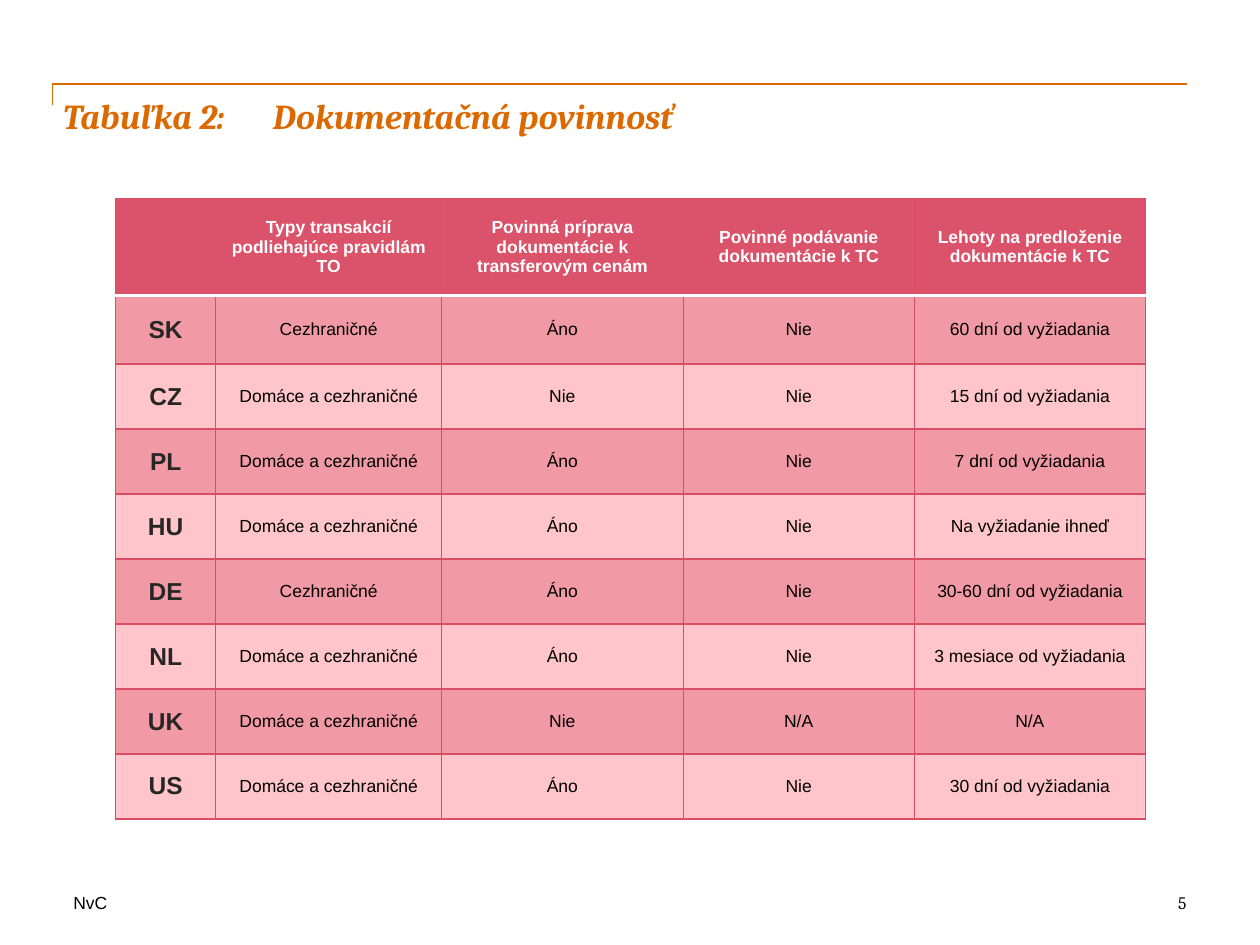
from lxml.etree import SubElement
from pptx import Presentation
from pptx.dml.color import RGBColor
from pptx.enum.text import MSO_ANCHOR as Anchor, MSO_AUTO_SIZE as AutoSize, PP_ALIGN as Align
from pptx.oxml.ns import qn
from pptx.util import Cm, Pt

ORANGE, BLACK, WHITE = "DC6900", "000000", "FFFFFF"
HEADER_FILL, BORDER, CODE_COLOR = "DB536A", "D94E65", "262626"
BAND_FILLS = ("F19AA5", "FFC5CB")

TITLE = "Dokumentačná povinnosť"
LABEL = "Tabuľka 2:"
COMPANY = "NvC"
PAGE = "5"
HEADERS = (
    "",
    "Typy transakcií podliehajúce pravidlám TO",
    "Povinná príprava dokumentácie k transferovým cenám",
    "Povinné podávanie dokumentácie k TC",
    "Lehoty na predloženie dokumentácie k TC",
)
ABROAD, BOTH = "Cezhraničné", "Domáce a cezhraničné"
COUNTRIES = (
    ("SK", ABROAD, "Áno", "Nie", "60 dní od vyžiadania"),
    ("CZ", BOTH, "Nie", "Nie", "15 dní od vyžiadania"),
    ("PL", BOTH, "Áno", "Nie", "7 dní od vyžiadania"),
    ("HU", BOTH, "Áno", "Nie", "Na vyžiadanie ihneď"),
    ("DE", ABROAD, "Áno", "Nie", "30-60 dní od vyžiadania"),
    ("NL", BOTH, "Áno", "Nie", "3 mesiace od vyžiadania"),
    ("UK", BOTH, "Nie", "N/A", "N/A"),
    ("US", BOTH, "Áno", "Nie", "30 dní od vyžiadania"),
)
COLUMN_WIDTHS = (2.02, 4.55, 4.87, 4.66, 4.66)
ROW_HEIGHTS = (1.94, 1.39) + (1.31,) * 7


def color(value):
    return RGBColor.from_string(value)


def write(text_frame, text, size, font, fill, bold=False, italic=False, align=Align.LEFT):
    text_frame.text = text
    paragraph = text_frame.paragraphs[0]
    paragraph.alignment = align
    for run in paragraph.runs:
        run.font.size = Pt(size)
        run.font.name = font
        run.font.bold = bold
        run.font.italic = italic
        run.font.color.rgb = color(fill)


def place_text(shape, box, *args, **style):
    shape.left, shape.top, shape.width, shape.height = map(Cm, box)
    frame = shape.text_frame
    frame.word_wrap = True
    frame.auto_size = AutoSize.NONE
    frame.vertical_anchor = Anchor.TOP
    frame.margin_left = frame.margin_top = frame.margin_right = frame.margin_bottom = 0
    write(frame, *args, **style)


def add_text(slide, box, *args, **style):
    place_text(slide.shapes.add_textbox(0, 0, 0, 0), box, *args, **style)


def set_border(cell, side, value, width):
    line = SubElement(cell._tc.get_or_add_tcPr(), qn(f"a:ln{side}"), w=str(Pt(width)))
    fill = SubElement(line, qn("a:solidFill"))
    SubElement(fill, qn("a:srgbClr"), val=value)


def add_rule(slide):
    left, top, right, bottom = map(Cm, (1.06, 1.69, 23.92, 2.12))
    builder = slide.shapes.build_freeform(left, bottom)
    builder.add_line_segments([(left, top), (right, top)], close=False)
    rule = builder.convert_to_shape()
    rule.shadow.inherit = False
    rule.fill.background()
    rule.line.color.rgb = color(ORANGE)
    rule.line.width = Pt(1)


def add_country_table(slide):
    rows = (HEADERS,) + COUNTRIES
    table = slide.shapes.add_table(
        len(rows), len(HEADERS), Cm(2.33), Cm(4.01),
        Cm(sum(COLUMN_WIDTHS)), Cm(sum(ROW_HEIGHTS)),
    ).table
    table.horz_banding = False
    for column, width in zip(table.columns, COLUMN_WIDTHS):
        column.width = Cm(width)
    for row, height in zip(table.rows, ROW_HEIGHTS):
        row.height = Cm(height)
    for i, texts in enumerate(rows):
        for j, text in enumerate(texts):
            cell = table.cell(i, j)
            header, code = i == 0, j == 0
            under_header = {0: "B", 1: "T"}.get(i)
            for side in "LRTB":
                set_border(cell, side, *((WHITE, 2) if side == under_header else (BORDER, 0.75)))
            cell.fill.solid()
            cell.fill.fore_color.rgb = color(HEADER_FILL if header else BAND_FILLS[(i - 1) % 2])
            cell.vertical_anchor = Anchor.MIDDLE
            text_color = WHITE if header else CODE_COLOR if code else BLACK
            write(cell.text_frame, text, 14 if code and not header else 10, "Arial",
                  text_color, bold=header or code, align=Align.CENTER)


def main():
    presentation = Presentation()
    presentation.slide_width, presentation.slide_height = Cm(25.4), Cm(19.05)
    slide = presentation.slides.add_slide(presentation.slide_layouts[5])
    heading = dict(bold=True, italic=True)
    add_rule(slide)
    add_text(slide, (1.48, 17.99, 7.2, 0.42), COMPANY, 10, "Arial", BLACK)
    add_text(slide, (19.69, 17.99, 4.23, 0.42), PAGE, 10, "Cambria", BLACK, align=Align.RIGHT)
    add_text(slide, (1.27, 1.9, 6.56, 6.35), LABEL, 20, "Cambria", ORANGE, **heading)
    place_text(slide.shapes.title, (5.5, 1.9, 19.05, 16.09), TITLE, 20, "Cambria", ORANGE, **heading)
    add_country_table(slide)
    presentation.save("out.pptx")


if __name__ == "__main__":
    main()
